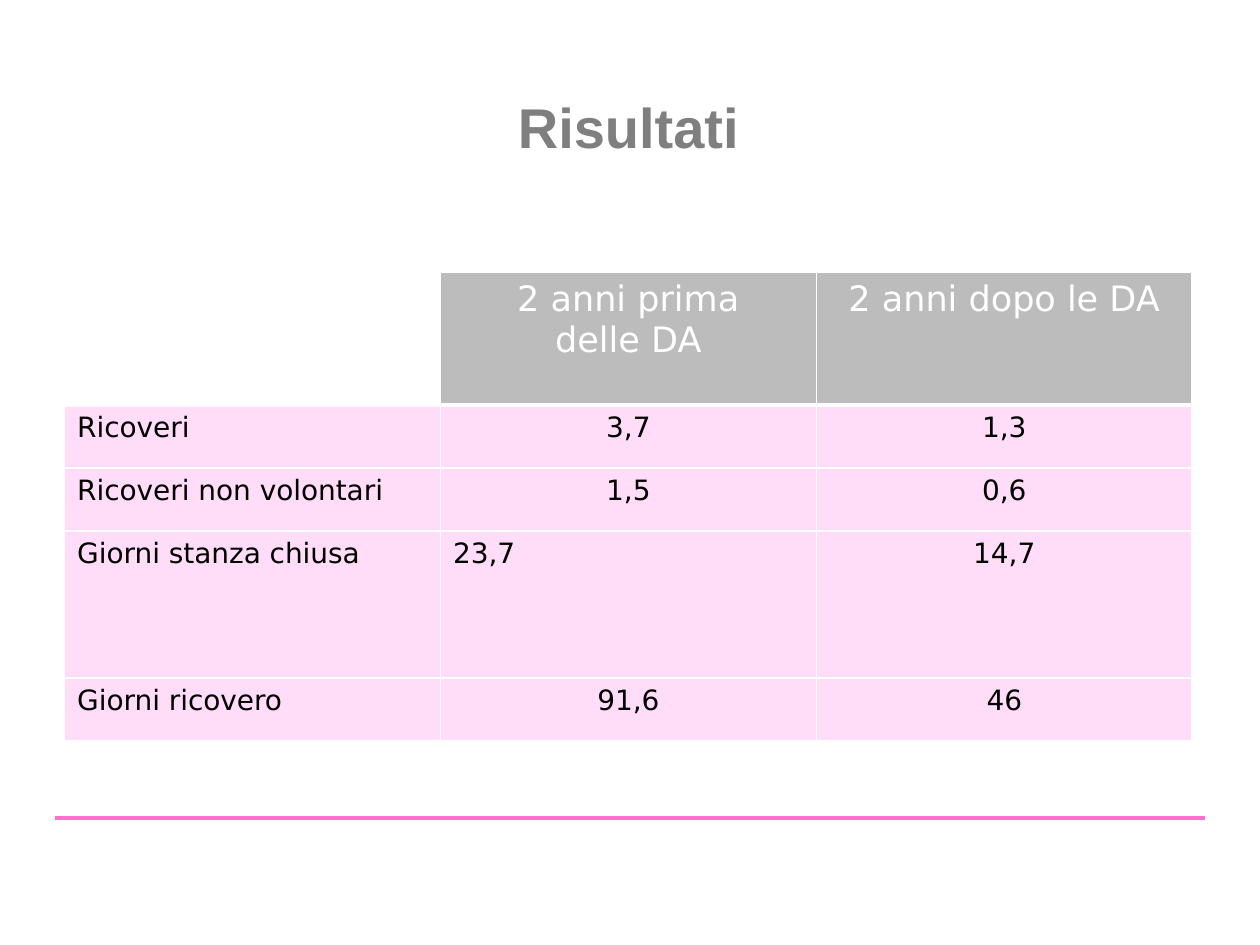
from lxml import etree
from pptx import Presentation
from pptx.dml.color import RGBColor
from pptx.enum import shapes, text
from pptx.oxml import ns
from pptx.util import Pt

GREY = RGBColor(0x7F, 0x7F, 0x7F)
HEADER_GREY = RGBColor(0xBC, 0xBC, 0xBC)
PALE_PINK = RGBColor(0xFF, 0xDC, 0xF8)
PINK = RGBColor(0xFF, 0x6F, 0xCF)
WHITE = RGBColor(0xFF, 0xFF, 0xFF)
BLACK = RGBColor(0, 0, 0)

ROWS = [
    ["", "2 anni prima\ndelle DA", "2 anni dopo le DA"],
    ["Ricoveri", "3,7", "1,3"],
    ["Ricoveri non volontari", "1,5", "0,6"],
    ["Giorni stanza chiusa", "23,7", "14,7"],
    ["Giorni ricovero", "91,6", "46"],
]
ROW_HEIGHTS = [75.6, 36, 36, 84, 36]
LEFT_ALIGNED_VALUE = (3, 1)


def add_footer_line(slide, left, top, width):
    line = slide.shapes.add_connector(
        shapes.MSO_CONNECTOR.STRAIGHT, Pt(left), Pt(top), Pt(left + width), Pt(top))
    line.line.color.rgb = PINK
    line.line.width = Pt(2)
    etree.SubElement(line._element.spPr, ns.qn("a:effectLst"))


def fill_title(slide, left, top, width, height):
    title = slide.shapes.title
    title.left, title.top, title.width, title.height = map(Pt, (left, top, width, height))
    frame = title.text_frame
    frame.text = "Risultati"
    frame.vertical_anchor = text.MSO_ANCHOR.MIDDLE
    frame.auto_size = text.MSO_AUTO_SIZE.SHAPE_TO_FIT_TEXT
    paragraph = frame.paragraphs[0]
    paragraph.alignment = text.PP_ALIGN.CENTER
    font = paragraph.runs[0].font
    font.name, font.size, font.bold = "Arial", Pt(32), True
    font.color.rgb = GREY


def set_borders(cell, widths):
    """Draw white borders; widths are points by side, in schema order."""
    properties = cell._tc.get_or_add_tcPr()
    for index, (side, width) in enumerate(widths.items()):
        border = etree.Element(ns.qn(f"a:ln{side}"), w=str(int(Pt(width))))
        fill = etree.SubElement(border, ns.qn("a:solidFill"))
        etree.SubElement(fill, ns.qn("a:srgbClr"), val=str(WHITE))
        properties.insert(index, border)


def format_cell(cell, row, column):
    is_header = row == 0
    if is_header and column == 0:
        cell.fill.background()
    else:
        cell.fill.solid()
        cell.fill.fore_color.rgb = HEADER_GREY if is_header else PALE_PINK
    set_borders(cell, {"L": 1, "R": 1, "T": 3 if row == 1 else 1, "B": 3 if is_header else 1})

    is_left = column == 0 or (row, column) == LEFT_ALIGNED_VALUE
    for paragraph in cell.text_frame.paragraphs:
        paragraph.alignment = text.PP_ALIGN.LEFT if is_left else text.PP_ALIGN.CENTER
        for run in paragraph.runs:
            run.font.name = "DejaVu Sans"
            run.font.size = Pt(20 if is_header else 16)
            run.font.bold = False
            run.font.color.rgb = WHITE if is_header else BLACK


def add_results_table(slide, left, top, width):
    frame = slide.shapes.add_table(
        len(ROWS), len(ROWS[0]), Pt(left), Pt(top), Pt(width), Pt(sum(ROW_HEIGHTS)))
    table = frame.table
    table.horz_banding = False
    for row, (values, height) in enumerate(zip(ROWS, ROW_HEIGHTS)):
        table.rows[row].height = Pt(height)
        for column, value in enumerate(values):
            cell = table.cell(row, column)
            cell.text_frame.text = value
            format_cell(cell, row, column)


def main():
    presentation = Presentation()
    presentation.slide_width, presentation.slide_height = Pt(720), Pt(540)
    slide = presentation.slides.add_slide(presentation.slide_layouts[5])

    add_footer_line(slide, 31.2, 467.3, 657.6)
    fill_title(slide, 36.9, 49, 644.4, 46)
    add_results_table(slide, 36.9, 155.8, 644.4)

    presentation.save("out.pptx")


if __name__ == "__main__":
    main()
